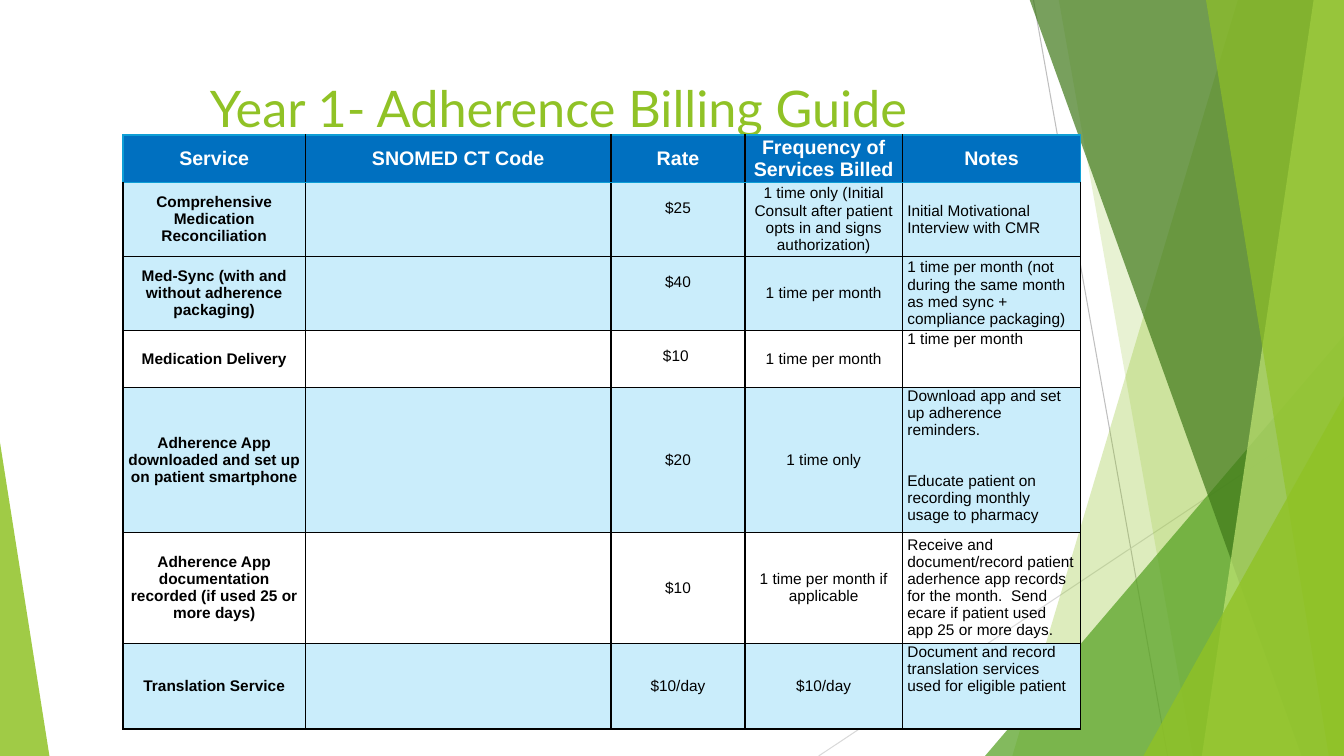
import pptx
import pptx.dml.color
import pptx.enum.shapes
import pptx.enum.text
import pptx.oxml.ns
import pptx.util
from lxml import etree

Inches = pptx.util.Inches
Pt = pptx.util.Pt
qn = pptx.oxml.ns.qn
ALIGN = pptx.enum.text.PP_ALIGN
ANCHOR = pptx.enum.text.MSO_ANCHOR
COLORS = {
    "lime": "90C226", "green": "54A021", "forest": "3F7819", "pale": "C0E474",
    "gray": "BFBFBF", "light_gray": "D9D9D9", "header": "0070C0",
    "header_edge": "0F9ED5", "band": "CAEDFB", "black": "000000", "white": "FFFFFF",
}


class SlideBuilder:
    title_font = "Lato"
    body_font = "Arial"

    def __init__(self, slide):
        self.slide = slide
        self.shapes = slide.shapes

    def rgb(self, color):
        return pptx.dml.color.RGBColor.from_string(COLORS[color])

    def paint(self, sp, color, alpha):
        sp.shadow.inherit = False
        sp.line.fill.background()
        sp.fill.solid()
        sp.fill.fore_color.rgb = self.rgb(color)
        clr = sp.fill._xPr.find(qn("a:solidFill"))[0]
        etree.SubElement(clr, qn("a:alpha"), val=str(alpha * 1000))

    def line(self, start, end, color):
        cxn = self.shapes.add_connector(
            pptx.enum.shapes.MSO_CONNECTOR.STRAIGHT, *map(Inches, start + end))
        cxn.line.color.rgb = self.rgb(color)
        cxn.line.width = Pt(0.75)
        etree.SubElement(cxn._element.spPr, qn("a:effectLst"))

    def ribbon(self, top_x, bottom_x, color, alpha):
        points = [(top_x, -0.01), (13.33, -0.01), (13.33, 7.5), (bottom_x, 7.5)]
        points = [(Inches(x), Inches(y)) for x, y in points]
        fb = self.shapes.build_freeform(*points[0])
        fb.add_line_segments(points[1:], close=True)
        self.paint(fb.convert_to_shape(), color, alpha)

    def triangle(self, box, apex, color, alpha):
        sp = self.shapes.add_shape(
            pptx.enum.shapes.MSO_SHAPE.ISOSCELES_TRIANGLE, *map(Inches, box))
        sp.adjustments[0] = apex
        self.paint(sp, color, alpha)

    def style(self, p, font, size, color, bold=False, align=ALIGN.CENTER):
        p.alignment = align
        p.font.name = font
        p.font.size = Pt(size)
        p.font.bold = bold
        p.font.color.rgb = self.rgb(color)

    def title(self, box, text):
        tf = self.shapes.add_textbox(*map(Inches, box)).text_frame
        tf.word_wrap = True
        tf.vertical_anchor = ANCHOR.MIDDLE
        tf.text = text
        self.style(tf.paragraphs[0], self.title_font, 36, "lime")

    def border(self, cell, side, color):
        ln = etree.SubElement(cell._tc.get_or_add_tcPr(), qn("a:ln" + side), w=str(Pt(1)))
        fill = etree.SubElement(ln, qn("a:solidFill"))
        etree.SubElement(fill, qn("a:srgbClr"), val=COLORS[color])

    def cell(self, cell, text, row, col, last_col, fill):
        header = row == 0
        edges = {
            "L": header and col == 0,
            "R": header and col == last_col,
            "T": row <= 1,
            "B": header,
        }
        for side, blue in edges.items():
            self.border(cell, side, "header_edge" if blue else "black")
        if fill:
            cell.fill.solid()
            cell.fill.fore_color.rgb = self.rgb(fill)
        else:
            cell.fill.background()
        cell.margin_left = cell.margin_right = Inches(0.05)
        cell.margin_top = cell.margin_bottom = 0
        cell.vertical_anchor = ANCHOR.MIDDLE
        cell.text = text
        align = ALIGN.LEFT if col == last_col and not header else ALIGN.CENTER
        for i, p in enumerate(cell.text_frame.paragraphs):
            self.style(p, self.body_font, 14 if header else 11,
                       "white" if header else "black", header or col == 0, align)
            if i:
                p.space_before = Pt(24)

    def table(self, left, top, widths, heights, rows, fills):
        table = self.shapes.add_table(
            len(rows), len(widths), Inches(left), Inches(top),
            Inches(sum(widths)), Inches(sum(heights))).table
        table.first_row = table.horz_banding = False
        for column, width in zip(table.columns, widths):
            column.width = Inches(width)
        for r, (texts, height, fill) in enumerate(zip(rows, heights, fills)):
            table.rows[r].height = Inches(height)
            for c, text in enumerate(texts):
                self.cell(table.cell(r, c), text, r, c, len(widths) - 1, fill)
        return table


ROWS = [
    ("Service", "SNOMED CT Code", "Rate", "Frequency of Services Billed", "Notes"),
    ("Comprehensive Medication Reconciliation", "", "$25",
     "1 time only (Initial Consult after patient opts in and signs authorization)",
     "Initial Motivational Interview with CMR"),
    ("Med-Sync (with and without adherence packaging)", "", "$40", "1 time per month",
     "1 time per month (not during the same month as med sync + compliance packaging)"),
    ("Medication Delivery", "", "$10 ", "1 time per month", "1 time per month"),
    ("Adherence App downloaded and set up on patient smartphone", "", "$20", "1 time only",
     "Download app and set up adherence reminders.\n"
     "Educate patient on recording monthly usage to pharmacy"),
    ("Adherence App documentation recorded (if used 25 or more days)", "", "$10",
     "1 time per month if applicable",
     "Receive and document/record patient aderhence app records for the month.  "
     "Send ecare if patient used app 25 or more days."),
    ("Translation Service", "", "$10/day", "$10/day",
     "Document and record translation services used for eligible patient"),
]


def main():
    prs = pptx.Presentation()
    prs.slide_width = Inches(13.33)
    prs.slide_height = Inches(7.5)
    s = SlideBuilder(prs.slides.add_slide(prs.slide_layouts[6]))

    s.line((10.25, 0), (11.58, 7.5), "gray")
    s.line((13.33, 4.03), (8.12, 7.5), "light_gray")
    s.ribbon(12.28, 10.04, "lime", 30)
    s.ribbon(10.5, 11.83, "lime", 20)
    s.triangle((9.77, 3.33, 3.56, 4.17), 1, "green", 72)
    s.ribbon(10.21, 12.91, "forest", 70)
    s.ribbon(13.03, 11.92, "pale", 70)
    s.ribbon(11.96, 13.18, "lime", 65)
    s.triangle((11.34, 3.93, 1.99, 3.57), 1, "lime", 80)
    s.triangle((0, 4.39, 0.49, 3.11), 0, "lime", 85)

    s.title((0.94, 0.67, 9.2, 0.79), "Year 1- Adherence Billing Guide")
    table = s.table(
        1.22, 1.34, [1.81, 3.03, 1.33, 1.56, 1.77],
        [0.45, 0.68, 0.68, 0.57, 1.37, 1.02, 0.85], ROWS,
        ["header", "band", "band", None, "band", None, "band"])
    rates = [table.cell(row, 2) for row in (1, 2, 3)]
    notes = [table.cell(row, 4) for row in (3, 4, 6)]
    for cell in rates + notes:
        cell.vertical_anchor = ANCHOR.TOP
    for cell in rates:
        cell.margin_top = Inches(0.17)

    prs.save("out.pptx")


if __name__ == "__main__":
    main()
